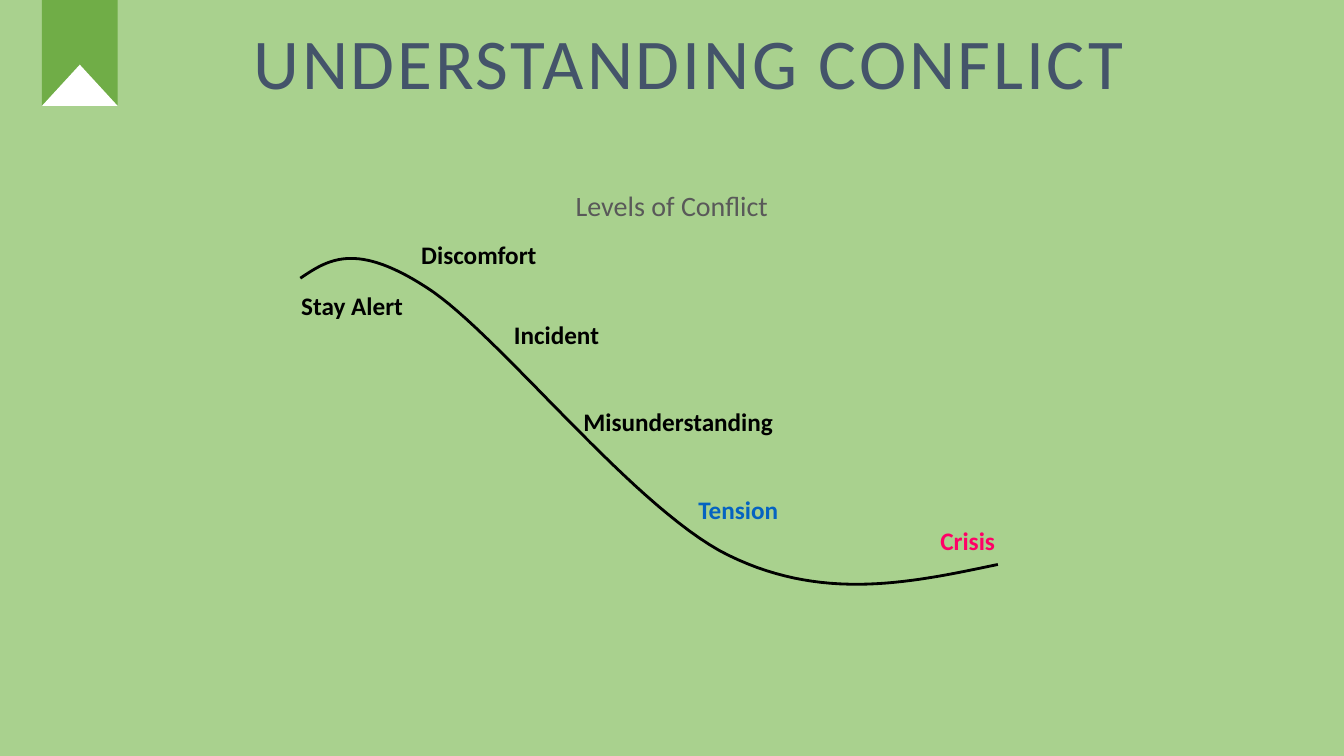
"""Build the slide showing the levels of conflict along a falling curve."""
import dataclasses

import pptx
import pptx.dml.color
import pptx.enum.shapes
import pptx.enum.text
import pptx.util


@dataclasses.dataclass(frozen=True)
class Theme:
    font: str = "Calibri"
    background: str = "A9D18E"
    ribbon: str = "70AD47"
    notch: str = "FFFFFF"
    title: str = "44546A"
    subtitle: str = "595959"
    ink: str = "000000"
    tension: str = "0563C1"
    crisis: str = "FF0066"
    title_size: int = 51
    subtitle_size: int = 20
    label_size: int = 18


theme = Theme()
rgb = pptx.dml.color.RGBColor.from_string
SHAPE = pptx.enum.shapes.MSO_SHAPE
ALIGN = pptx.enum.text.PP_ALIGN

prs = pptx.Presentation()
prs.slide_width = pptx.util.Inches(13.33)
prs.slide_height = pptx.util.Inches(7.5)
COL = prs.slide_width / 160
ROW = prs.slide_height / 90


def grid(*lengths):
    """Turn alternating columns and rows into slide lengths."""
    return [round(n * (ROW if i % 2 else COL)) for i, n in enumerate(lengths)]


def add_text(s, text, box, size, color, align=ALIGN.LEFT, bold=False):
    """Add a one-paragraph text box and return its paragraph."""
    tf = s.shapes.add_textbox(*grid(*box)).text_frame
    tf.word_wrap = True
    tf.text = text
    p = tf.paragraphs[0]
    p.alignment = align
    r = p.runs[0]
    r.font.name = theme.font
    r.font.size = pptx.util.Pt(size)
    r.font.bold = bold
    r.font.color.rgb = rgb(color)
    return p


s = prs.slides.add_slide(prs.slide_layouts[6])
s.background.fill.solid()
s.background.fill.fore_color.rgb = rgb(theme.background)

ribbon = s.shapes.add_group_shape()
for kind, box, color in [
    (SHAPE.RECTANGLE, (5, 0, 9, 12.6), theme.ribbon),
    (SHAPE.ISOSCELES_TRIANGLE, (5, 7.7, 9, 4.9), theme.notch),
]:
    sp = ribbon.shapes.add_shape(kind, *grid(*box))
    sp.shadow.inherit = False
    sp.fill.solid()
    sp.fill.fore_color.rgb = rgb(color)
    sp.line.fill.background()

p = add_text(s, "UNDERSTANDING CONFLICT", (15.24, 2.76, 133.56, 19.56),
             theme.title_size, theme.title, ALIGN.CENTER)
p.line_spacing = 0.9
p.runs[0].font._element.set("spc", "200")

curve = [
    (35.76, 33.12), (39, 30.96), (42.24, 28.68),
    (50.76, 34.2), (59.28, 39.6), (75.48, 60.6),
    (86.76, 66.12), (98.04, 71.64), (108.48, 69.36), (118.8, 67.2),
]
STEPS = 30
points = []
for start in range(0, len(curve) - 1, 3):
    controls = curve[start:start + 4]
    for step in range(1, STEPS + 1):
        t = step / STEPS
        weights = ((1 - t) ** 3, 3 * t * (1 - t) ** 2, 3 * t ** 2 * (1 - t), t ** 3)
        points.append(grid(*(sum(w * c[axis] for w, c in zip(weights, controls))
                             for axis in (0, 1))))
builder = s.shapes.build_freeform(*grid(*curve[0]))
builder.add_line_segments(points, close=False)
sp = builder.convert_to_shape()
sp.shadow.inherit = False
sp.fill.background()
sp.line.color.rgb = rgb(theme.ink)
sp.line.width = pptx.util.Pt(2)

p = add_text(s, "Levels of Conflict", (13.2, 21.48, 133.56, 47.16),
             theme.subtitle_size, theme.subtitle, ALIGN.CENTER)
p.line_spacing = 1.1
p.space_before = pptx.util.Pt(7)

for text, left, top, width, color in [
    ("Discomfort", 48.96, 27.96, 24, theme.ink),
    ("Incident", 60, 37.44, 13.92, theme.ink),
    ("Misunderstanding", 68.28, 47.76, 27.36, theme.ink),
    ("Tension", 81.96, 58.32, 13.2, theme.tension),
    ("Crisis", 110.76, 61.92, 10.56, theme.crisis),
    ("Stay Alert", 34.68, 33.96, 16.56, theme.ink),
]:
    add_text(s, text, (left, top, width, 4.8), theme.label_size, color, bold=True)

prs.save("out.pptx")
